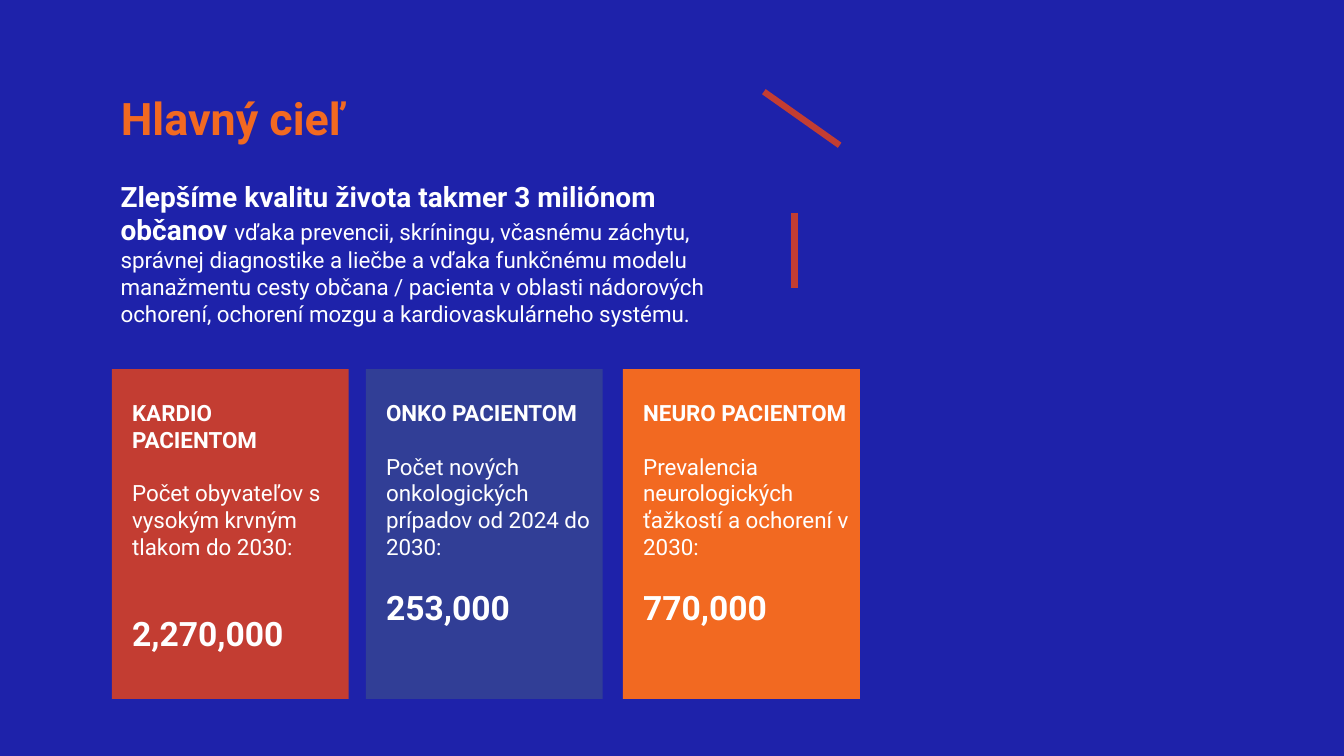
from dataclasses import dataclass

from lxml import etree
from pptx import Presentation
from pptx.dml.color import RGBColor
from pptx.enum.shapes import MSO_CONNECTOR, MSO_SHAPE
from pptx.enum.text import MSO_ANCHOR, MSO_AUTO_SIZE, PP_ALIGN
from pptx.oxml.ns import qn
from pptx.util import Cm, Pt

RECTANGLE = MSO_SHAPE.RECTANGLE
STRAIGHT = MSO_CONNECTOR.STRAIGHT
TOP = MSO_ANCHOR.TOP
LEFT = PP_ALIGN.LEFT
NO_AUTOFIT = MSO_AUTO_SIZE.NONE
TITLE_ONLY = 5


@dataclass(frozen=True)
class Theme:
    font: str = "Roboto"
    background: RGBColor = RGBColor(0x1E, 0x22, 0xAA)
    orange: RGBColor = RGBColor(0xF2, 0x69, 0x21)
    red: RGBColor = RGBColor(0xC3, 0x3D, 0x32)
    indigo: RGBColor = RGBColor(0x31, 0x3E, 0x96)
    white: RGBColor = RGBColor(0xFF, 0xFF, 0xFF)
    title: Pt = Pt(32)
    figure: Pt = Pt(24)
    lead: Pt = Pt(20)
    body: Pt = Pt(16)
    accent_width: Pt = Pt(4.5)


THEME = Theme()

# Left edge, fill, heading, description, figure, space above the figure
CARDS = [
    (2.82, THEME.red, "KARDIO PACIENTOM",
     "Počet obyvateľov s vysokým krvným tlakom do 2030:", "2,270,000", Pt(37.5)),
    (9.22, THEME.indigo, "ONKO PACIENTOM",
     "Počet nových onkologických prípadov od 2024 do 2030:", "253,000", Pt(19)),
    (15.7, THEME.orange, "NEURO PACIENTOM",
     "Prevalencia neurologických ťažkostí a ochorení v 2030:", "770,000", Pt(19)),
]

# Start and end points of the accent strokes
ACCENTS = [
    (19.25, 2.31, 21.16, 3.66),
    (20.02, 5.36, 20.02, 7.26),
]


def add_run(paragraph, text, size, bold=False, color=THEME.white):
    run = paragraph.add_run()
    run.text = text
    run.font.name = THEME.font
    run.font.size = size
    run.font.bold = bold
    run.font.color.rgb = color


def prepare_frame(frame):
    frame.word_wrap = True
    frame.auto_size = NO_AUTOFIT
    frame.vertical_anchor = TOP
    frame.paragraphs[0].alignment = LEFT


def add_title(slide):
    title = slide.shapes.title
    title.left, title.top = Cm(2.79), Cm(2.16)
    title.width, title.height = Cm(16.66), Cm(1.8)
    prepare_frame(title.text_frame)
    add_run(title.text_frame.paragraphs[0], "Hlavný cieľ",
            THEME.title, True, THEME.orange)


def add_goal(slide):
    goal = slide.shapes.add_textbox(Cm(2.79), Cm(4.39), Cm(16.66), Cm(4.02))
    prepare_frame(goal.text_frame)
    statement = goal.text_frame.paragraphs[0]
    add_run(statement, "Zlepšíme kvalitu života takmer 3 miliónom občanov ",
            THEME.lead, True)
    add_run(statement,
            "vďaka prevencii, skríningu, včasnému záchytu, správnej diagnostike "
            "a liečbe a vďaka funkčnému modelu manažmentu cesty občana / pacienta "
            "v oblasti nádorových ochorení, ochorení mozgu a kardiovaskulárneho "
            "systému.", THEME.body)


def add_card(slide, left, fill, heading, description, figure, figure_gap):
    card = slide.shapes.add_shape(RECTANGLE, Cm(left), Cm(9.3), Cm(5.97), Cm(8.31))
    card.shadow.inherit = False
    card.fill.solid()
    card.fill.fore_color.rgb = fill
    card.line.fill.background()

    frame = card.text_frame
    prepare_frame(frame)
    frame.margin_left, frame.margin_top = Cm(0.51), Cm(0.76)
    frame.margin_right, frame.margin_bottom = Cm(0.25), Cm(0.13)
    add_run(frame.paragraphs[0], heading, THEME.body, True)
    for text, size, bold, gap in (
        (description, THEME.body, False, Pt(19)),
        (figure, THEME.figure, True, figure_gap),
    ):
        paragraph = frame.add_paragraph()
        paragraph.alignment = LEFT
        paragraph.space_before = gap
        add_run(paragraph, text, size, bold)


def add_accent(slide, *ends):
    accent = slide.shapes.add_connector(STRAIGHT, *map(Cm, ends))
    accent.line.color.rgb = THEME.red
    accent.line.width = THEME.accent_width
    etree.SubElement(accent._element.spPr, qn("a:effectLst"))


def main():
    deck = Presentation()
    deck.slide_width, deck.slide_height = Cm(33.87), Cm(19.05)
    slide = deck.slides.add_slide(deck.slide_layouts[TITLE_ONLY])
    slide.background.fill.solid()
    slide.background.fill.fore_color.rgb = THEME.background

    # Title and goal statement
    add_title(slide)
    add_goal(slide)

    # Patient groups
    for card in CARDS:
        add_card(slide, *card)

    # Accent strokes
    for accent in ACCENTS:
        add_accent(slide, *accent)

    deck.save("out.pptx")


if __name__ == "__main__":
    main()
